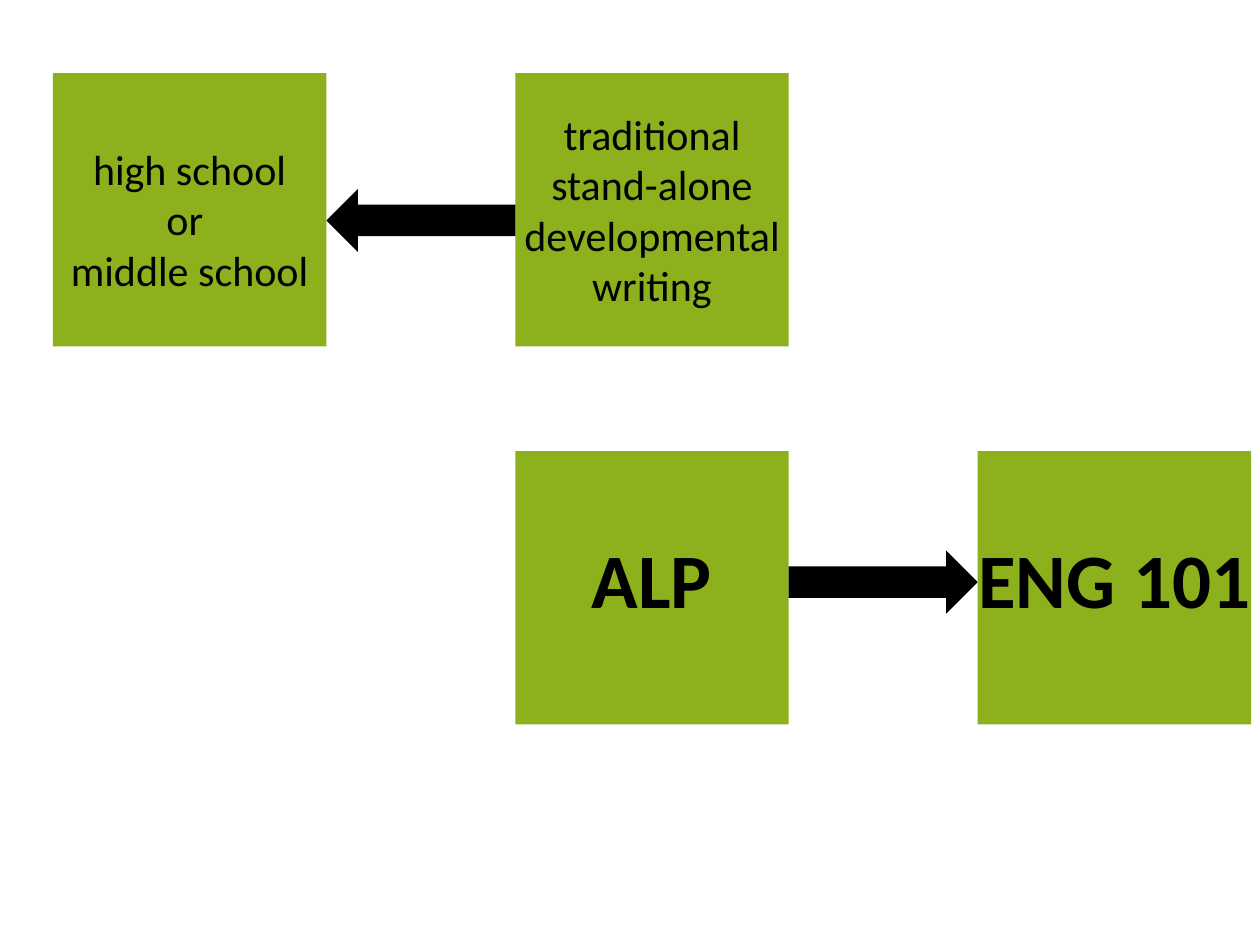
from dataclasses import dataclass

from pptx import Presentation
from pptx.dml.color import RGBColor
from pptx.enum.shapes import MSO_SHAPE
from pptx.enum.text import MSO_AUTO_SIZE, PP_ALIGN
from pptx.util import Inches, Pt

RECTANGLE = MSO_SHAPE.RECTANGLE
LEFT_ARROW = MSO_SHAPE.LEFT_ARROW
RIGHT_ARROW = MSO_SHAPE.RIGHT_ARROW
CENTER = PP_ALIGN.CENTER
FIT_SHAPE = MSO_AUTO_SIZE.SHAPE_TO_FIT_TEXT
BLANK_LAYOUT = 6


@dataclass(frozen=True)
class Theme:
    green: RGBColor = RGBColor(0x8D, 0xB0, 0x1D)
    black: RGBColor = RGBColor(0, 0, 0)
    font: str = "Calibri"
    body: int = 24
    course: int = 44


THEME = Theme()

# Grid in inches: square cells, with arrows filling the gaps between columns
LEFT, TOP = 0.42, 0.58
SIDE, GAP, ROW_PITCH = 2.17, 1.5, 3
ARROW_HEIGHT = 0.5
LABEL_WIDTH = 2.5


def cell(col, row):
    """Left and top of a grid cell."""
    return LEFT + col * (SIDE + GAP), TOP + row * ROW_PITCH


def add_solid(shapes, kind, box, color):
    sp = shapes.add_shape(kind, *map(Inches, box))
    sp.shadow.inherit = False
    sp.fill.solid()
    sp.fill.fore_color.rgb = color
    sp.line.fill.background()


def add_label(shapes, box, lines, size, bold):
    tf = shapes.add_textbox(*map(Inches, box)).text_frame
    tf.word_wrap = True
    tf.auto_size = FIT_SHAPE
    for i, line in enumerate(lines):
        p = tf.paragraphs[0] if i == 0 else tf.add_paragraph()
        p.alignment = CENTER
        r = p.add_run()
        r.text = line
        r.font.name = THEME.font
        r.font.size = Pt(size)
        r.font.bold = bold
        r.font.color.rgb = THEME.black


def add_stage(shapes, origin, lines, label_drop, label_height,
              size=THEME.body, bold=False):
    """Green square with a label slightly wider than it, centred across it."""
    x, y = origin
    add_solid(shapes, RECTANGLE, (x, y, SIDE, SIDE), THEME.green)
    label = (x + (SIDE - LABEL_WIDTH) / 2, y + label_drop,
             LABEL_WIDTH, label_height)
    add_label(shapes, label, lines, size, bold)


def add_arrow(shapes, origin, kind, drop):
    """Arrow across the gap to the right of the cell at origin."""
    x, y = origin
    add_solid(shapes, kind, (x + SIDE, y + drop, GAP, ARROW_HEIGHT),
              THEME.black)


def add_traditional_path(slide, row):
    course = slide.shapes.add_group_shape().shapes
    add_stage(course, cell(1, row),
              ["traditional", "stand-alone", "developmental writing"],
              0.23, 1.72)
    school = slide.shapes.add_group_shape().shapes
    add_arrow(school, cell(0, row), LEFT_ARROW, 0.92)
    add_stage(school, cell(0, row),
              ["high school", "or ", "middle school"], 0.51, 1.31)


def add_alp_path(slide, row):
    style = dict(label_drop=0.59, label_height=0.84,
                 size=THEME.course, bold=True)
    alp = slide.shapes.add_group_shape().shapes
    add_stage(alp, cell(1, row), ["ALP"], **style)
    english = slide.shapes.add_group_shape().shapes
    add_arrow(english, cell(1, row), RIGHT_ARROW, 0.79)
    add_stage(english, cell(2, row), ["ENG 101"], **style)


def main():
    prs = Presentation()
    prs.slide_width, prs.slide_height = Inches(10), Inches(7.5)
    slide = prs.slides.add_slide(prs.slide_layouts[BLANK_LAYOUT])
    add_traditional_path(slide, 0)
    add_alp_path(slide, 1)
    prs.save("out.pptx")


if __name__ == "__main__":
    main()
